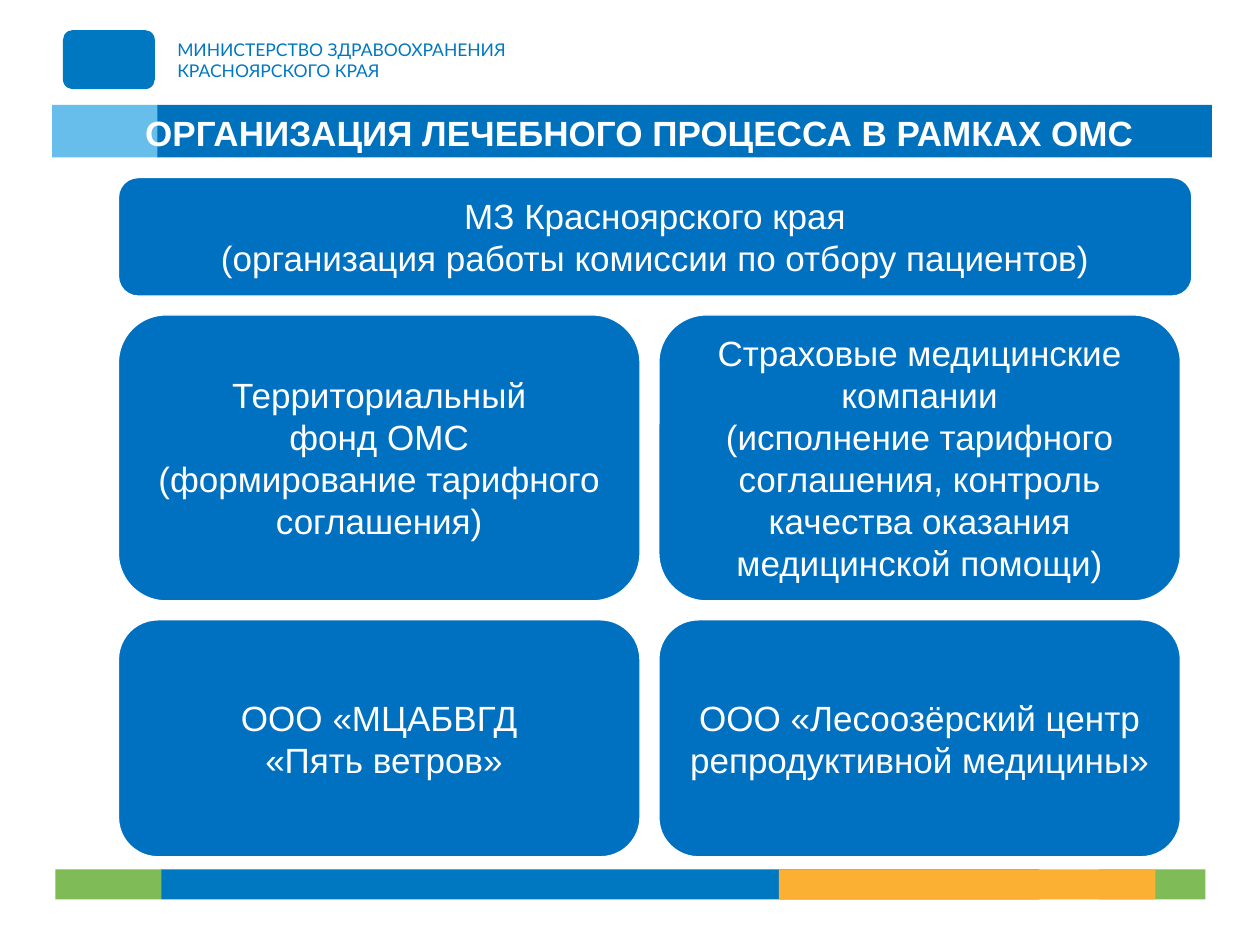
from dataclasses import dataclass

from pptx import Presentation
from pptx.dml.color import RGBColor
from pptx.enum.shapes import MSO_SHAPE
from pptx.enum.text import MSO_ANCHOR, PP_ALIGN
from pptx.util import Pt


@dataclass(frozen=True)
class Theme:
    white: str = "FFFFFF"
    box: str = "0070C0"
    band: str = "0071BC"
    light_band: str = "67BEEB"
    ministry: str = "0078C1"
    green: str = "7FBB56"
    orange: str = "FBB034"
    font: str = "Arial"
    ministry_font: str = "Lato"
    body_size: float = 20
    ministry_size: float = 10
    outline: float = 0.75


class SlideBuilder:
    def __init__(self, page, theme):
        self.page = page
        self.theme = theme

    def shape(self, kind, area, color):
        shape = self.page.shapes.add_shape(kind, *map(Pt, area))
        shape.shadow.inherit = False
        shape.fill.solid()
        shape.fill.fore_color.rgb = RGBColor.from_string(color)
        shape.line.fill.background()
        return shape

    def bar(self, area, color):
        return self.shape(MSO_SHAPE.RECTANGLE, area, color)

    def set_text(self, frame, lines, font, size, color, align, bold=False):
        frame.word_wrap = True
        frame.text = "\n".join(lines)
        for paragraph in frame.paragraphs:
            paragraph.alignment = align
            paragraph.font.name = font
            paragraph.font.size = Pt(size)
            paragraph.font.bold = bold
            paragraph.font.color.rgb = RGBColor.from_string(color)

    def card(self, area, lines):
        theme = self.theme
        card = self.shape(MSO_SHAPE.ROUNDED_RECTANGLE, area, theme.box)
        card.line.color.rgb = RGBColor.from_string(theme.white)
        card.line.width = Pt(theme.outline)
        card.text_frame.vertical_anchor = MSO_ANCHOR.MIDDLE
        self.set_text(card.text_frame, lines, theme.font, theme.body_size,
                      theme.white, PP_ALIGN.CENTER)

    def ministry_name(self, area, text):
        theme = self.theme
        frame = self.page.shapes.add_textbox(*map(Pt, area)).text_frame
        frame.margin_left = frame.margin_right = Pt(0)
        frame.margin_top = frame.margin_bottom = Pt(0)
        self.set_text(frame, [text], theme.ministry_font, theme.ministry_size,
                      theme.ministry, PP_ALIGN.LEFT)

    def title(self, area, text):
        theme = self.theme
        title = self.page.shapes.title
        title.left, title.top, title.width, title.height = map(Pt, area)
        title.text_frame.vertical_anchor = MSO_ANCHOR.MIDDLE
        self.set_text(title.text_frame, [text], theme.font, theme.body_size,
                      theme.white, PP_ALIGN.CENTER, bold=True)
        title.element.getparent().append(title.element)


def main():
    deck = Presentation()
    deck.slide_width, deck.slide_height = Pt(720), Pt(540)
    theme = Theme()
    slide = SlideBuilder(deck.slides.add_slide(deck.slide_layouts[5]), theme)

    slide.bar((29.8, 60, 61, 30), theme.light_band)
    slide.bar((90, 60, 602.6, 30), theme.band)
    slide.shape(MSO_SHAPE.ROUNDED_RECTANGLE, (36, 17.2, 52.5, 33.8), theme.ministry)
    slide.ministry_name((101.3, 22.4, 287.3, 24),
                        "МИНИСТЕРСТВО ЗДРАВООХРАНЕНИЯ\vКРАСНОЯРСКОГО КРАЯ")

    footer = [
        (31.7, 61, theme.green),
        (627.8, 61, theme.green),
        (92.2, 501.8, theme.ministry),
        (445, 215.3, theme.orange),
    ]
    for left, width, color in footer:
        slide.bar((left, 496.8, width, 17.2), color)

    left, top, gap, column_width = 67.7, 101.5, 10.8, 298
    rows = [
        (67.7, 613.4, [
            ["МЗ Красноярского края",
             "(организация работы комиссии по отбору пациентов)"],
        ]),
        (163.4, column_width, [
            ["Территориальный", "фонд ОМС",
             "(формирование тарифного соглашения)"],
            ["Страховые медицинские компании",
             "(исполнение тарифного соглашения, контроль качества "
             "оказания медицинской помощи)"],
        ]),
        (135.4, column_width, [
            ["ООО «МЦАБВГД", " «Пять ветров»"],
            ["ООО «Лесоозёрский центр репродуктивной медицины»"],
        ]),
    ]
    for height, width, cards in rows:
        for column, lines in enumerate(cards):
            slide.card((left + column * (width + gap), top, width, height), lines)
        top += height + gap

    slide.title((10.8, 50.4, 709.2, 51.1),
                "ОРГАНИЗАЦИЯ ЛЕЧЕБНОГО ПРОЦЕССА В РАМКАХ ОМС")
    deck.save("out.pptx")


if __name__ == "__main__":
    main()
